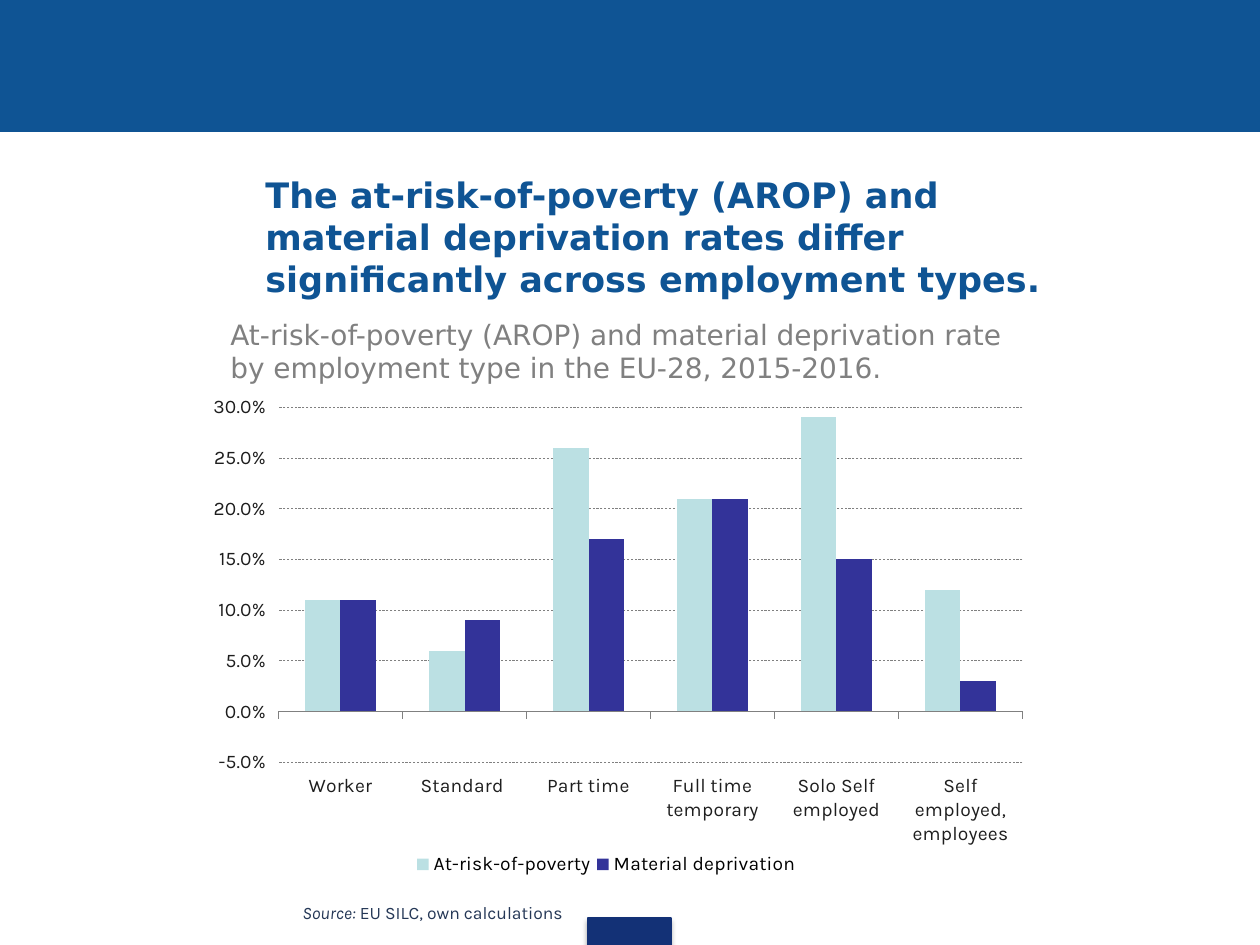
from lxml.etree import SubElement
from pptx import Presentation
from pptx.chart.data import CategoryChartData
from pptx.dml.color import RGBColor
from pptx.enum.chart import XL_CHART_TYPE, XL_LEGEND_POSITION, XL_TICK_LABEL_POSITION, XL_TICK_MARK
from pptx.enum.dml import MSO_LINE
from pptx.enum.shapes import MSO_SHAPE
from pptx.enum.text import MSO_ANCHOR
from pptx.oxml import parse_xml
from pptx.oxml.ns import nsdecls, qn
from pptx.util import Pt

EMU_PER_PX = 914400 / 126
COLORS = {
    "band": "0F5494", "tab": "133176", "subtitle": "808080", "source": "243756",
    "text": "000000", "label": "1E1E1E", "rule": "808080", "paper": "FFFFFF",
    "poverty": "BBE0E3", "deprivation": "333399",
}
CATEGORIES = ["Worker", "Standard ", "Part time", "Full time temporary",
              "Solo Self employed", "Self employed, employees"]
RATES = {
    "At-risk-of-poverty": ("poverty", [0.11, 0.06, 0.26, 0.21, 0.29, 0.12]),
    "Material deprivation": ("deprivation", [0.11, 0.09, 0.17, 0.21, 0.15, 0.03]),
}
PLOT_LAYOUT = {"layoutTarget": "outer", "xMode": "edge", "yMode": "edge",
               "x": 0.018, "y": 0.007, "w": 0.951, "h": 0.9}
LEGEND_LAYOUT = {"xMode": "edge", "yMode": "edge", "x": 0.25, "y": 0.91, "w": 0.46, "h": 0.07}


def px(length):
    return round(length * EMU_PER_PX)


def color(name):
    return RGBColor.from_string(COLORS[name])


def apply(target, values):
    for name, value in values.items():
        setattr(target, name, value)


def set_font(font, color_name, **values):
    apply(font, values)
    font.color.rgb = color(color_name)


def set_fill(fill, color_name):
    fill.solid()
    fill.fore_color.rgb = color(color_name)


def set_line(line, color_name, width):
    line.color.rgb = color(color_name)
    line.width = Pt(width)


def place(layout, settings):
    """Fix a chart part at fractions of the chart's size."""
    manual = SubElement(layout, qn("c:manualLayout"))
    for tag, value in settings.items():
        SubElement(manual, qn(f"c:{tag}")).set("val", str(value))


class SlideBuilder:
    def __init__(self, presentation):
        self.slide = presentation.slides.add_slide(presentation.slide_layouts[6])
        self.label_font = {"name": "Karla", "size": Pt(11)}

    def rectangle(self, box, color_name, shadowed=False):
        rect = self.slide.shapes.add_shape(MSO_SHAPE.RECTANGLE, *map(px, box))
        set_fill(rect.fill, color_name)
        set_line(rect.line, color_name, 0.75)
        rect.shadow.inherit = False
        if shadowed:
            rect._element.spPr.find(qn("a:effectLst")).append(parse_xml(
                f'<a:outerShdw {nsdecls("a")} blurRad="{Pt(3.1)}" dist="{Pt(1.8)}" '
                'dir="5400000" rotWithShape="0"><a:srgbClr val="000000">'
                '<a:alpha val="35000"/></a:srgbClr></a:outerShdw>'))

    def text(self, box, runs, color_name, font, anchor=MSO_ANCHOR.TOP, margin=0, indent=0):
        """Add one paragraph; runs are (wording, italic) pairs."""
        frame = self.slide.shapes.add_textbox(*map(px, box)).text_frame
        apply(frame, {"word_wrap": True, "vertical_anchor": anchor})
        paragraph = frame.paragraphs[0]
        properties = paragraph._p.get_or_add_pPr()
        properties.set("marL", str(px(margin)))
        properties.set("indent", str(px(indent)))
        for wording, italic in runs:
            run = paragraph.add_run()
            run.text = wording
            set_font(run.font, color_name, italic=italic, **font)

    def column_chart(self, box, categories, rates):
        data = CategoryChartData(number_format="0.0%")
        data.categories = categories
        for name, (_, values) in rates.items():
            data.add_series(name, values)
        chart = self.slide.shapes.add_chart(
            XL_CHART_TYPE.COLUMN_CLUSTERED, *map(px, box), data).chart
        apply(chart, {"has_title": False, "has_legend": True})
        set_font(chart.font, "text", **self.label_font)
        apply(chart.legend, {"position": XL_LEGEND_POSITION.BOTTOM, "include_in_layout": False})
        set_font(chart.legend.font, "text", **self.label_font)

        plot = chart.plots[0]
        apply(plot, {"gap_width": 150, "overlap": 0, "vary_by_categories": False})
        for series, (color_name, _) in zip(plot.series, rates.values()):
            set_fill(series.format.fill, color_name)
            series.invert_if_negative = False

        for axis in (chart.category_axis, chart.value_axis):
            apply(axis, {"tick_label_position": XL_TICK_LABEL_POSITION.LOW,
                         "major_tick_mark": XL_TICK_MARK.OUTSIDE,
                         "minor_tick_mark": XL_TICK_MARK.NONE})
            set_font(axis.tick_labels.font, "label", **self.label_font)
        set_line(chart.category_axis.format.line, "rule", 0.75)
        rate_axis = chart.value_axis
        apply(rate_axis, {"minimum_scale": -0.05, "maximum_scale": 0.3, "major_unit": 0.05,
                          "has_major_gridlines": True})
        apply(rate_axis.tick_labels, {"number_format": "0.0%", "number_format_is_linked": False})
        rate_axis.format.line.fill.background()
        grid = rate_axis.major_gridlines.format.line
        set_line(grid, "rule", 0.3)
        grid.dash_style = MSO_LINE.DASH

        plot_area = chart._chartSpace.chart.plotArea
        plot_layout = plot_area.find(qn("c:layout"))
        if plot_layout is None:
            plot_layout = plot_area.makeelement(qn("c:layout"))
            plot_area.insert(0, plot_layout)
        place(plot_layout, PLOT_LAYOUT)
        legend = chart.legend._element
        legend_layout = legend.find(qn("c:layout"))
        if legend_layout is None:
            legend_layout = legend.makeelement(qn("c:layout"))
            legend.find(qn("c:legendPos")).addnext(legend_layout)
        place(legend_layout, LEGEND_LAYOUT)


def main():
    presentation = Presentation()
    apply(presentation, {"slide_width": px(1260), "slide_height": px(945)})
    builder = SlideBuilder(presentation)
    set_fill(builder.slide.background.fill, "paper")
    builder.rectangle((0, 0, 1260, 131), "band")
    builder.rectangle((588, 918, 83, 27), "tab", shadowed=True)
    builder.text((286, 896, 472, 34),
                 [("Source:", True), (" EU SILC, own calculations", False)],
                 "source", {"name": "Karla", "size": Pt(10)}, margin=42, indent=-38)
    builder.column_chart((198, 392, 851, 500), CATEGORIES, RATES)
    builder.text((204, 172, 851, 129),
                 [("The at-risk-of-poverty (AROP) and material deprivation rates differ "
                   "significantly across employment types.", False)],
                 "band", {"name": "DejaVu Sans", "size": Pt(20), "bold": True},
                 anchor=MSO_ANCHOR.MIDDLE, margin=49)
    builder.text((218, 311, 811, 81),
                 [("At-risk-of-poverty (AROP) and material deprivation rate by employment "
                   "type in the EU-28, 2015-2016.", False)],
                 "subtitle", {"name": "DejaVu Sans", "size": Pt(16)})
    presentation.save("out.pptx")


if __name__ == "__main__":
    main()
